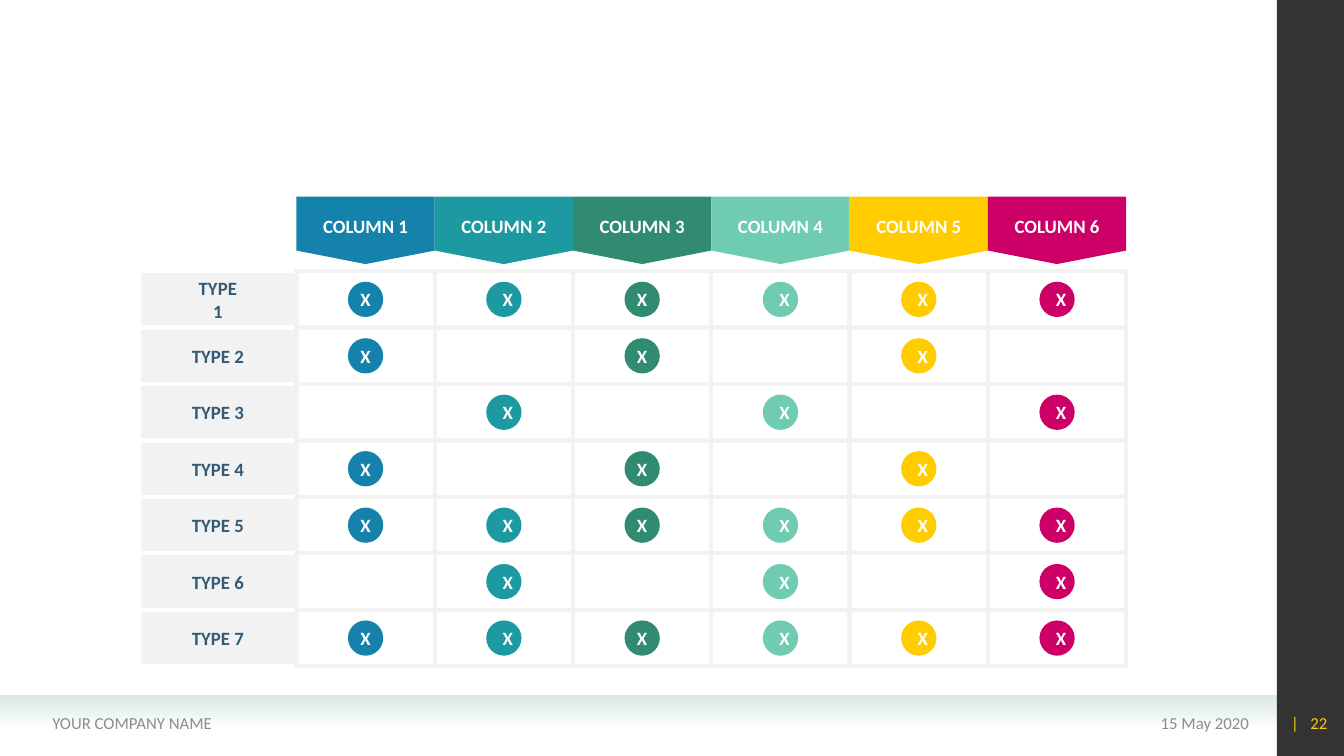
"""Build a comparison matrix of seven types against six coloured columns."""
import dataclasses
import typing

import pptx
import pptx.dml.color
import pptx.enum.shapes
import pptx.enum.text
import pptx.oxml
import pptx.oxml.ns
import pptx.slide
import pptx.util

SHAPE = pptx.enum.shapes.MSO_SHAPE
ALIGN = pptx.enum.text.PP_ALIGN
FIT = pptx.enum.text.MSO_AUTO_SIZE
WIDTH, HEIGHT = 13.33, 7.5


@dataclasses.dataclass(frozen=True)
class Theme:
    font: str = "Calibri"
    label_size: float = 13.4
    footer_size: float = 12
    line_width: float = 3
    white: str = "FFFFFF"
    grey: str = "F2F2F2"
    type_text: str = "335B74"
    footer_text: str = "8C8C8C"
    accent: str = "FFCC00"
    band: str = "D9E9E8"
    sidebar: str = "000000"


@dataclasses.dataclass(frozen=True)
class Box:
    x: float
    y: float
    w: float
    h: float

    def centred(self, w: float, h: float) -> "Box":
        return Box(self.x + (self.w - w) / 2, self.y + (self.h - h) / 2, w, h)

    def emu(self) -> list[int]:
        return [pptx.util.Inches(v) for v in (self.x, self.y, self.w, self.h)]


@dataclasses.dataclass(frozen=True)
class Grid:
    x: float = 2.94
    y: float = 2.69
    col_w: float = 8.23 / 6
    row_h: float = 0.56
    type_w: float = 1.56
    header_y: float = 1.95
    header_h: float = 0.67

    def cell(self, col: int, row: int) -> Box:
        return Box(self.x + col * self.col_w, self.y + row * self.row_h, self.col_w, self.row_h)

    def header(self, col: int) -> Box:
        return Box(self.x + col * self.col_w, self.header_y, self.col_w, self.header_h)

    def type_cell(self, row: int) -> Box:
        return Box(self.x - self.type_w, self.y + row * self.row_h, self.type_w, self.row_h)


@dataclasses.dataclass(frozen=True)
class Column:
    title: str
    color: str
    rows: tuple[int, ...]
    wrap_marks: bool


@dataclasses.dataclass(frozen=True)
class Footer:
    text: str
    box: Box
    align: typing.Any
    color: str


def percent(x: float, y: float, w: float, h: float) -> Box:
    return Box(x * WIDTH / 100, y * HEIGHT / 100, w * WIDTH / 100, h * HEIGHT / 100)


THEME = Theme()
GRID = Grid()
ODD_ROWS, EVEN_ROWS = (1, 2, 4, 5, 7), (1, 3, 5, 6, 7)
COLUMNS = [
    Column("COLUMN 1", "1482AB", ODD_ROWS, False),
    Column("COLUMN 2", "1D9AA1", EVEN_ROWS, True),
    Column("COLUMN 3", "318B71", ODD_ROWS, False),
    Column("COLUMN 4", "70CCB1", EVEN_ROWS, True),
    Column("COLUMN 5", "FFCC00", ODD_ROWS, True),
    Column("COLUMN 6", "CC0066", EVEN_ROWS, True),
]
TYPES = [f"TYPE {n}" for n in range(1, 8)]
FOOTERS = [
    Footer("15 May 2020", percent(68.25, 92.93, 25.43, 5.33), ALIGN.RIGHT, THEME.footer_text),
    Footer("YOUR COMPANY NAME", percent(3.15, 92.93, 36.75, 5.33), ALIGN.LEFT, THEME.footer_text),
    Footer("|   22", percent(94.5, 92.93, 5, 5.33), ALIGN.RIGHT, THEME.accent),
]


def rgb(color: str) -> pptx.dml.color.RGBColor:
    return pptx.dml.color.RGBColor.from_string(color)


def add_alpha(color_el: typing.Any, share: int) -> None:
    alpha = pptx.oxml.parse_xml(f'<a:alpha {pptx.oxml.ns.nsdecls("a")} val="{share * 1000}"/>')
    color_el.append(alpha)


def add_shape(s: pptx.slide.Slide, kind: typing.Any, box: Box,
              fill: str | None = None, line: str | None = None) -> typing.Any:
    sp = s.shapes.add_shape(kind, *box.emu())
    sp.shadow.inherit = False
    if fill:
        sp.fill.solid()
        sp.fill.fore_color.rgb = rgb(fill)
    else:
        sp.fill.background()
    if line:
        sp.line.color.rgb = rgb(line)
        sp.line.width = pptx.util.Pt(THEME.line_width)
    else:
        sp.line.fill.background()
    return sp


def add_text(s: pptx.slide.Slide, text: str, box: Box, *, color: str = THEME.white,
             size: float = THEME.label_size, bold: bool = True, align: typing.Any = ALIGN.CENTER,
             wrap: bool = False, fit: typing.Any = FIT.SHAPE_TO_FIT_TEXT) -> None:
    tf = s.shapes.add_textbox(*box.emu()).text_frame
    tf.word_wrap = wrap
    tf.auto_size = fit
    tf.vertical_anchor = pptx.enum.text.MSO_ANCHOR.MIDDLE
    p = tf.paragraphs[0]
    p.alignment = align
    r = p.add_run()
    r.text = text
    r.font.name, r.font.size, r.font.bold = THEME.font, pptx.util.Pt(size), bold
    r.font.color.rgb = rgb(color)


def draw_frame(s: pptx.slide.Slide) -> None:
    band = add_shape(s, SHAPE.RECTANGLE, percent(0, 92, 95, 4.13))
    band.fill.gradient()
    band.fill.gradient_angle = 270
    for stop in band.fill.gradient_stops:
        stop.color.rgb = rgb(THEME.band)
    tag = pptx.oxml.ns.qn("a:srgbClr")
    add_alpha(list(band.element.iter(tag))[-1], 0)
    sidebar = add_shape(s, SHAPE.RECTANGLE, percent(95, 0, 5, 100), THEME.sidebar)
    add_alpha(next(sidebar.element.iter(tag)), 80)
    for f in FOOTERS:
        add_text(s, f.text, f.box, color=f.color, size=THEME.footer_size,
                 bold=False, align=f.align, wrap=True, fit=FIT.NONE)


def draw_types(s: pptx.slide.Slide) -> None:
    for row, name in enumerate(TYPES):
        box = GRID.type_cell(row)
        add_shape(s, SHAPE.RECTANGLE, box, THEME.grey, THEME.white)
        first = row == 0
        add_text(s, name, box.centred(0.71 if first else 0.75, 0.33),
                 color=THEME.type_text, wrap=first)


def draw_columns(s: pptx.slide.Slide) -> None:
    for col, column in enumerate(COLUMNS):
        header = GRID.header(col)
        add_shape(s, SHAPE.FLOWCHART_OFFPAGE_CONNECTOR, header, column.color)
        label = dataclasses.replace(header, h=0.59)
        add_text(s, column.title, label.centred(1.08, 0.33))
        for row in range(len(TYPES)):
            add_shape(s, SHAPE.RECTANGLE, GRID.cell(col, row), line=THEME.grey)


def draw_marks(s: pptx.slide.Slide) -> None:
    for col, column in enumerate(COLUMNS):
        for row in column.rows:
            cell = GRID.cell(col, row - 1)
            add_shape(s, SHAPE.OVAL, cell.centred(0.35, 0.35), column.color)
            width = 0.22 if column.wrap_marks else 0.31
            add_text(s, "X", cell.centred(width, 0.33), wrap=column.wrap_marks)


def main() -> None:
    prs = pptx.Presentation()
    prs.slide_width, prs.slide_height = pptx.util.Inches(WIDTH), pptx.util.Inches(HEIGHT)
    s = prs.slides.add_slide(prs.slide_layouts[6])
    draw_frame(s)
    draw_types(s)
    draw_columns(s)
    draw_marks(s)
    prs.save("out.pptx")


if __name__ == "__main__":
    main()
